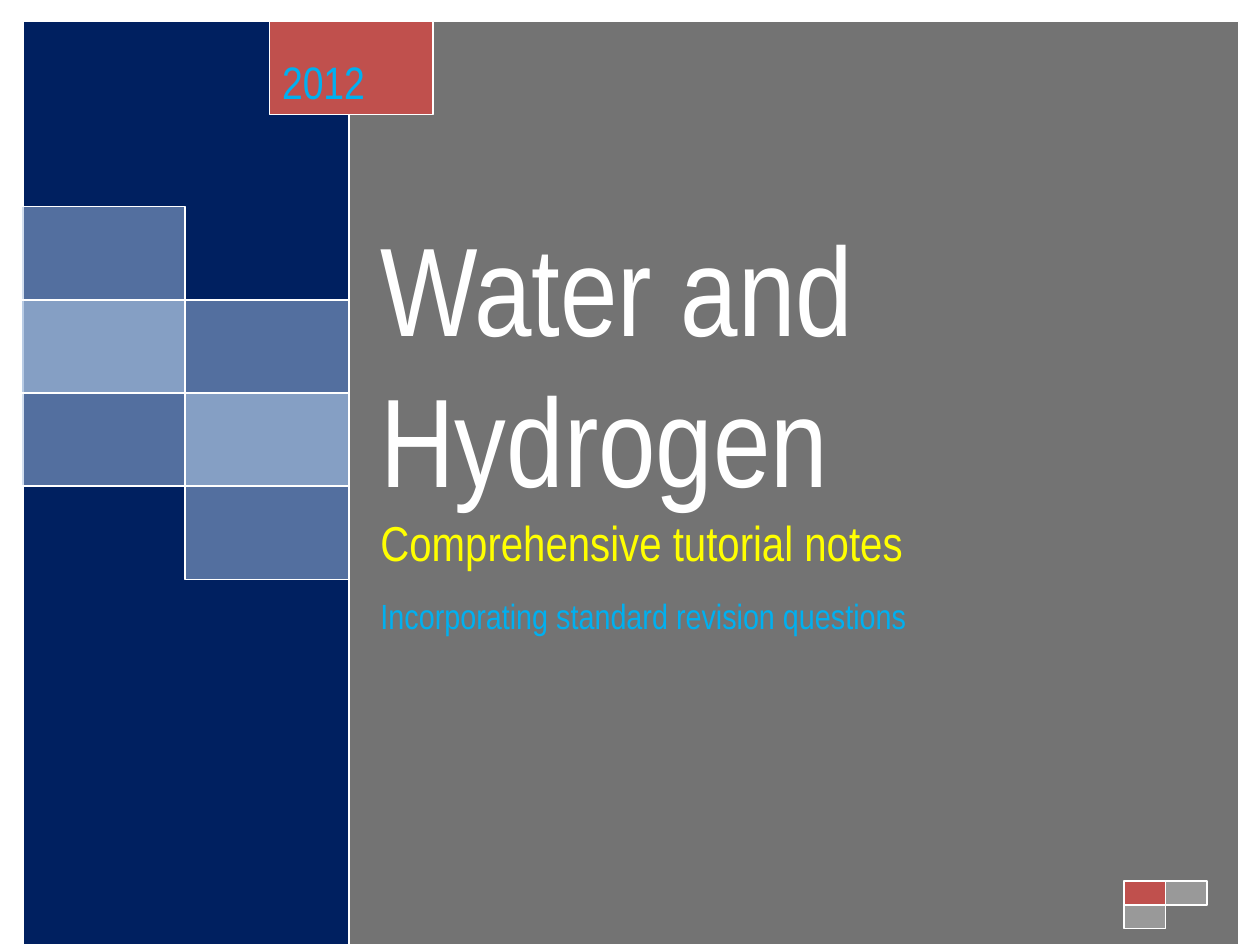
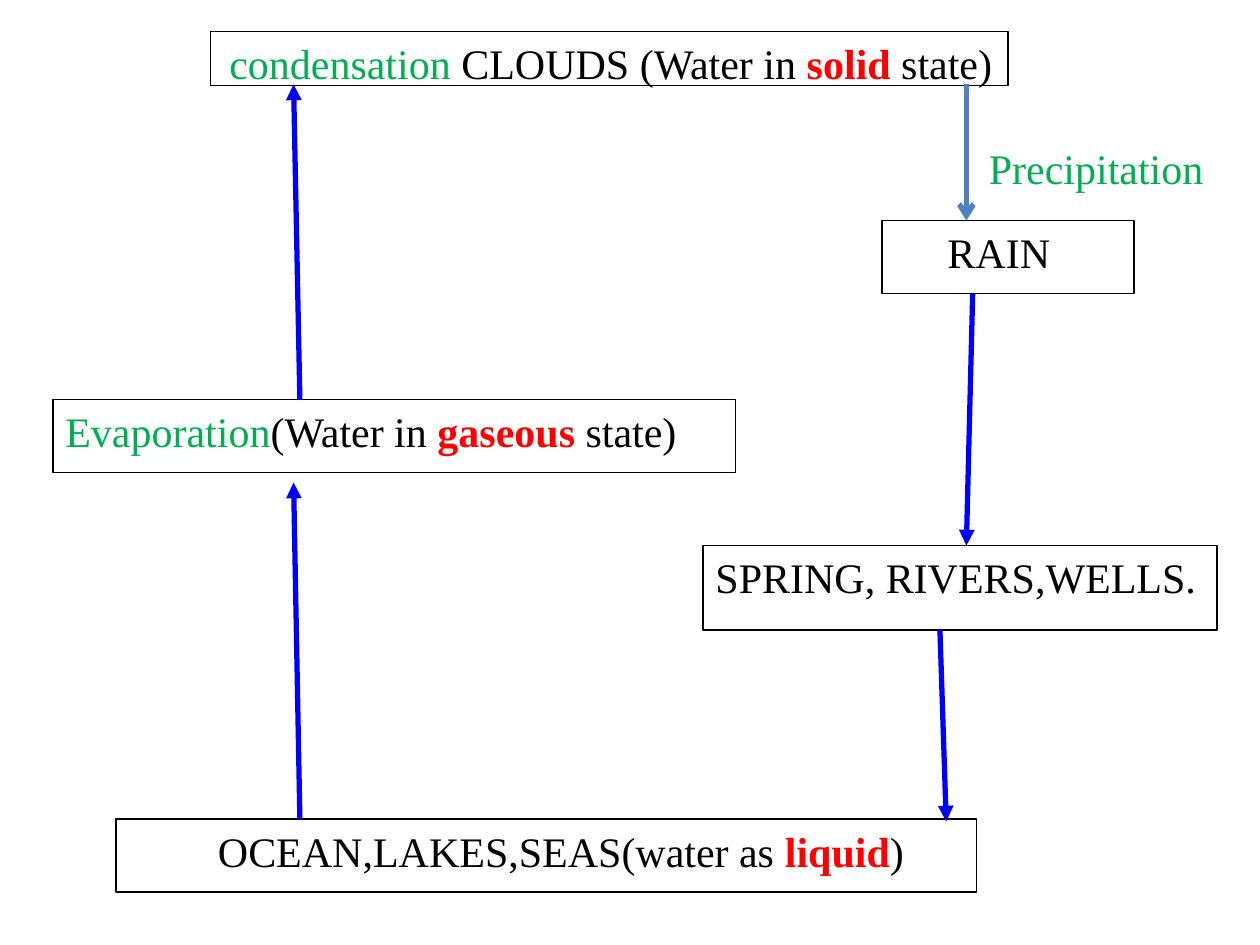
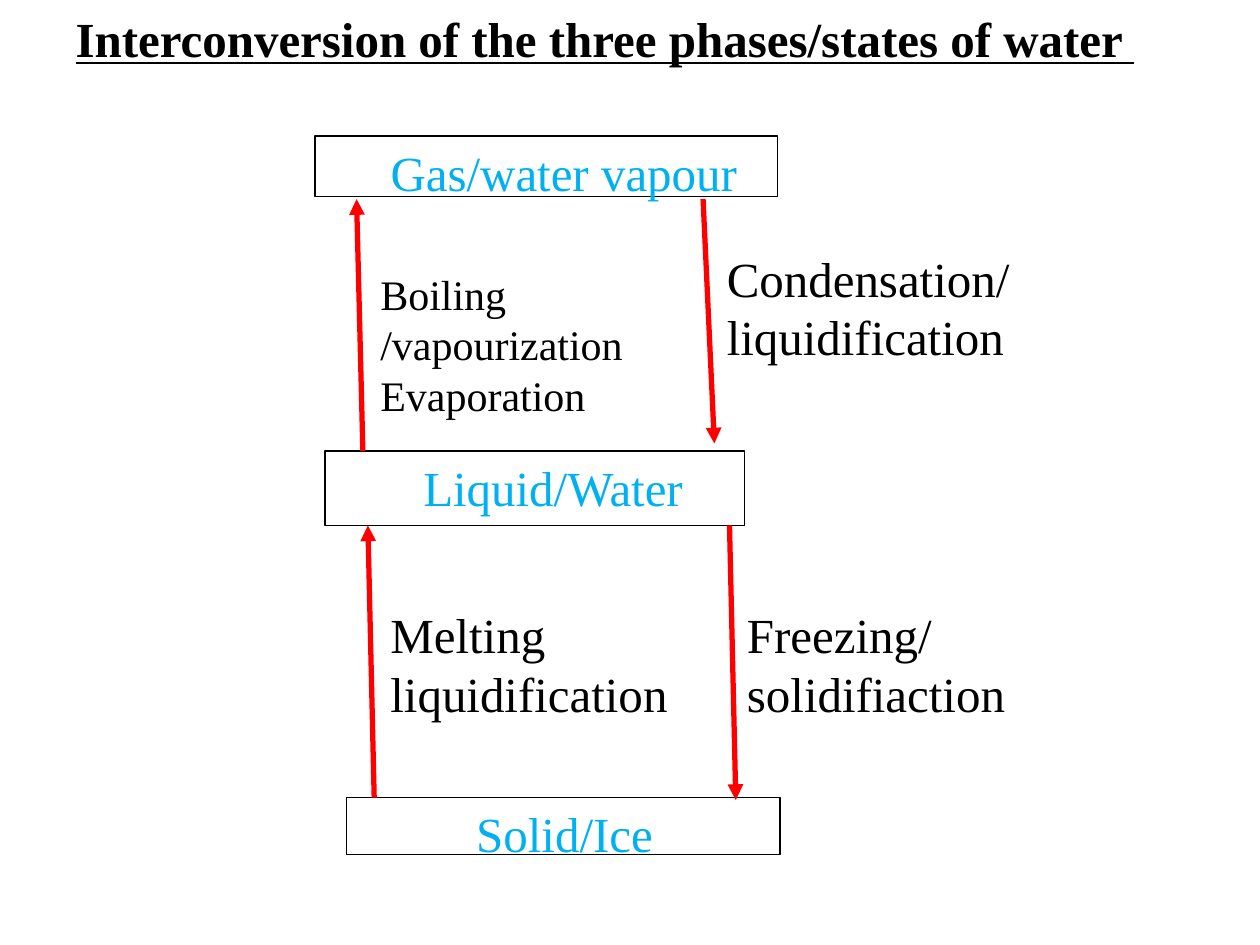
"""Build three slides on water, the water cycle and its changes of state."""
from dataclasses import dataclass
from typing import Optional

import pptx
import pptx.dml.color
import pptx.enum.shapes
import pptx.enum.text
import pptx.oxml
import pptx.oxml.ns
import pptx.util

Inches = pptx.util.Inches
Pt = pptx.util.Pt

WHITE, BLACK, RED = "FFFFFF", "000000", "FF0000"
NAVY, GREY, BRICK = "002060", "737373", "C0504D"
TILE_BLUE, TILE_GREY = "A7BFDE", "BFBFBF"
SKY, YELLOW, GREEN = "00B0F0", "FFFF00", "00B050"
CYCLE_BLUE, RAIN_BLUE = "0000FF", "4F81BD"
SERIF, NARROW = "Times New Roman", "Arial Narrow"


@dataclass(frozen=True)
class Run:
    """A piece of text with one look."""
    text: str
    color: str = BLACK
    size: float = 24
    bold: bool = False
    underline: bool = False
    font: str = SERIF


@dataclass(frozen=True)
class Line:
    """A paragraph made of runs."""
    runs: tuple[Run, ...]
    before: float = 0
    after: float = 0


@dataclass(frozen=True)
class Area:
    """A rectangle in inches."""
    left: float
    top: float
    width: float
    height: float

    def emu(self) -> tuple:
        """Return the four lengths for python-pptx."""
        return tuple(Inches(v) for v in (self.left, self.top, self.width, self.height))


@dataclass(frozen=True)
class Stage:
    """A framed stage of a diagram, its text set in by an indent."""
    area: Area
    runs: tuple[Run, ...]
    indent: float = 0


@dataclass(frozen=True)
class Label:
    """Free text, one entry for each line."""
    area: Area
    lines: tuple[Run, ...]
    indent: float = 0


@dataclass(frozen=True)
class Arrow:
    """An arrow from one point to another."""
    start: tuple[float, float]
    end: tuple[float, float]
    color: str
    head: str = "triangle"


def rgb(color: str) -> pptx.dml.color.RGBColor:
    """Turn a hex string into a colour."""
    return pptx.dml.color.RGBColor.from_string(color)


def write(frame, lines: list[Line]) -> None:
    """Fill a text frame run by run."""
    for index, line in enumerate(lines):
        paragraph = frame.add_paragraph() if index else frame.paragraphs[0]
        paragraph.alignment = pptx.enum.text.PP_ALIGN.LEFT
        paragraph.space_before = Pt(line.before)
        paragraph.space_after = Pt(line.after)
        for part in line.runs:
            run = paragraph.add_run()
            run.text = part.text
            run.font.name = part.font
            run.font.size = Pt(part.size)
            run.font.bold = part.bold
            run.font.underline = part.underline
            run.font.color.rgb = rgb(part.color)


def add_block(slide, area: Area, fill: str, border: str = WHITE,
              weight: float = 1, opacity: Optional[int] = None):
    """Draw a bordered rectangle, see-through if an opacity is given."""
    block = slide.shapes.add_shape(
        pptx.enum.shapes.MSO_SHAPE.RECTANGLE, *area.emu())
    block.shadow.inherit = False
    block.fill.solid()
    block.fill.fore_color.rgb = rgb(fill)
    block.line.color.rgb = rgb(border)
    block.line.width = Pt(weight)
    block.text_frame.vertical_anchor = pptx.enum.text.MSO_ANCHOR.TOP
    if opacity is not None:
        solid = block.fill._xPr.find(pptx.oxml.ns.qn("a:solidFill"))
        alpha = solid[0].makeelement(pptx.oxml.ns.qn("a:alpha"), {"val": str(opacity * 1000)})
        solid[0].append(alpha)
    return block


def add_stage(slide, stage: Stage) -> None:
    """Draw a stage of a diagram."""
    frame = add_block(slide, stage.area, WHITE, BLACK, 0.75).text_frame
    frame.word_wrap = True
    frame.margin_left = Inches(0.1 + stage.indent)
    write(frame, [Line(stage.runs)])


def add_label(slide, label: Label) -> None:
    """Write free text beside the stages."""
    frame = slide.shapes.add_textbox(*label.area.emu()).text_frame
    frame.word_wrap = False
    frame.margin_left = Inches(0.1 + label.indent)
    write(frame, [Line((run,)) for run in label.lines])


def add_arrow(slide, arrow: Arrow) -> None:
    """Draw an arrow with its head at the end point."""
    connector = slide.shapes.add_connector(
        pptx.enum.shapes.MSO_CONNECTOR.STRAIGHT,
        *(Inches(v) for v in arrow.start + arrow.end))
    connector.line.color.rgb = rgb(arrow.color)
    connector.line.width = Pt(3)
    outline = connector.line._get_or_add_ln()
    outline.append(outline.makeelement(pptx.oxml.ns.qn("a:tailEnd"), {"type": arrow.head}))
    properties = connector._element.spPr
    properties.append(properties.makeelement(pptx.oxml.ns.qn("a:effectLst"), {}))


def add_diagram(slide, stages: list[Stage], arrows: list[Arrow],
                labels: list[Label]) -> None:
    """Draw stages, then arrows, then labels."""
    for stage in stages:
        add_stage(slide, stage)
    for arrow in arrows:
        add_arrow(slide, arrow)
    for label in labels:
        add_label(slide, label)


def build_cover(slide) -> None:
    """Draw the cover with its panels and tiles."""
    add_block(slide, Area(0.18, 0.17, 9.65, 7.33), NAVY)
    panel = add_block(slide, Area(2.77, 0.17, 7.06, 7.33), GREY).text_frame
    panel.word_wrap = True
    panel.margin_left, panel.margin_top = Inches(0.25), Inches(1.5)
    panel.margin_right, panel.margin_bottom = Inches(0.5), Inches(0.05)
    write(panel, [
        Line((Run("Water and Hydrogen", WHITE, 72, font=NARROW),)),
        Line((Run("Comprehensive tutorial notes", YELLOW, 28, font=NARROW),)),
        Line((Run("Incorporating standard revision questions", SKY, 20, font=NARROW),), before=13),
    ])

    tile_width, tile_height = 1.3, 0.74
    for column, row, opacity in ((1, 2, 80), (1, 1, 50), (0, 1, 80),
                                 (0, 0, 50), (0, 2, 50), (1, 3, 50)):
        tile = Area(0.17 + column * tile_width, 1.64 + row * tile_height,
                    tile_width, tile_height)
        add_block(slide, tile, TILE_BLUE, opacity=opacity)

    year = add_block(slide, Area(2.14, 0.17, tile_width, tile_height), BRICK).text_frame
    year.vertical_anchor = pptx.enum.text.MSO_ANCHOR.BOTTOM
    write(year, [Line((Run("2012", SKY, 26, font=NARROW),), after=10)])

    chip_width, chip_height = 0.33, 0.19
    for column, row, fill, opacity in ((0, 1, TILE_GREY, 50), (0, 0, BRICK, None),
                                       (1, 0, TILE_GREY, 50)):
        chip = Area(8.92 + column * chip_width, 6.99 + row * chip_height,
                    chip_width, chip_height)
        add_block(slide, chip, fill, opacity=opacity)


def build_water_cycle(slide) -> None:
    """Draw the water cycle."""
    stages = [
        Stage(Area(1.67, 0.25, 6.33, 0.43),
              (Run("condensation", GREEN), Run(" CLOUDS (Water in "),
               Run("solid", RED, bold=True), Run(" state)")), 0.05),
        Stage(Area(7, 1.75, 2, 0.58), (Run("RAIN"),), 0.42),
        Stage(Area(5.58, 4.33, 4.08, 0.67), (Run("SPRING, RIVERS,WELLS."),)),
        Stage(Area(0.92, 6.5, 6.83, 0.58),
              (Run("OCEAN,LAKES,SEAS(water as "), Run("liquid", RED, bold=True),
               Run(")")), 0.71),
        Stage(Area(0.42, 3.17, 5.42, 0.58),
              (Run("Evaporation", GREEN), Run("(Water in "),
               Run("gaseous ", RED, bold=True), Run("state)"))),
    ]
    arrows = [
        Arrow((2.38, 3.17), (2.33, 0.67), CYCLE_BLUE),
        Arrow((2.38, 6.5), (2.33, 3.83), CYCLE_BLUE),
        Arrow((7.46, 5), (7.51, 6.52), CYCLE_BLUE),
        Arrow((7.72, 2.33), (7.67, 4.33), CYCLE_BLUE),
        Arrow((7.67, 0.67), (7.67, 1.75), RAIN_BLUE, "arrow"),
    ]
    labels = [Label(Area(7.75, 1.08, 1.92, 0.5), (Run("Precipitation", GREEN),))]
    add_diagram(slide, stages, arrows, labels)


def build_phases(slide) -> None:
    """Draw the changes between gas, liquid and solid."""
    stages = [
        Stage(Area(2.5, 1.08, 3.67, 0.48), (Run("Gas/water vapour", SKY, 28),), 0.5),
        Stage(Area(2.58, 3.58, 3.33, 0.59), (Run("Liquid/Water", SKY, 28),), 0.68),
        Stage(Area(2.75, 6.33, 3.44, 0.45), (Run("Solid/Ice", SKY, 28),), 0.93),
    ]
    arrows = [
        Arrow((2.97, 6.33), (2.92, 4.17), RED),
        Arrow((2.88, 3.58), (2.83, 1.58), RED),
        Arrow((5.58, 1.58), (5.67, 3.52), RED),
        Arrow((5.79, 4.17), (5.84, 6.35), RED),
    ]
    heading = Run("Interconversion of the three phases/states of water ",
                  size=28, bold=True, underline=True)
    labels = [
        Label(Area(0, 0.02, 9.2, 0.88), (heading,), 0.5),
        Label(Area(3, 4.75, 2.42, 1.04),
              (Run("Melting", size=28), Run("liquidification", size=28))),
        Label(Area(5.83, 4.75, 2.27, 1.04),
              (Run("Freezing/", size=28), Run("solidifiaction", size=28))),
        Label(Area(2.92, 2.08, 2.14, 1.31),
              (Run("Boiling"), Run("/vapourization"), Run("Evaporation"))),
        Label(Area(5.67, 1.92, 2.47, 1.04),
              (Run("Condensation/", size=28), Run("liquidification", size=28))),
    ]
    add_diagram(slide, stages, arrows, labels)


def main() -> None:
    """Build and save the presentation."""
    deck = pptx.Presentation()
    deck.slide_width, deck.slide_height = Inches(10), Inches(7.5)
    for build in (build_cover, build_water_cycle, build_phases):
        build(deck.slides.add_slide(deck.slide_layouts[6]))
    deck.save("out.pptx")


if __name__ == "__main__":
    main()
